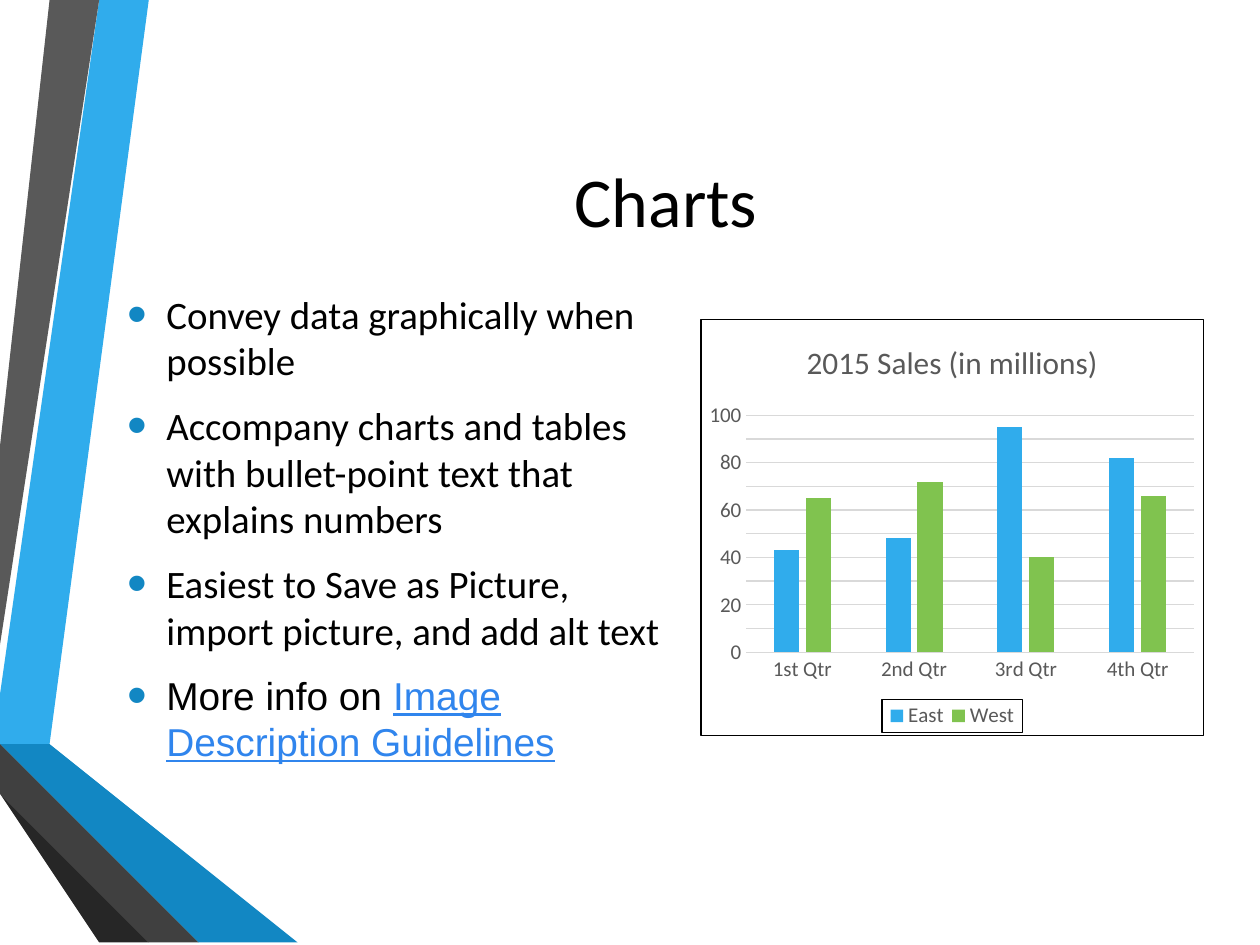
from copy import deepcopy

from lxml import etree
from pptx import Presentation
from pptx import util as u
from pptx.chart import data as cd
from pptx.dml.color import RGBColor
from pptx.enum import chart as ch, text
from pptx.oxml import parse_xml
from pptx.oxml.ns import nsdecls, qn

HUES = {
    "sky": "30ACEC", "blue": "1287C3", "navy": "0C5A82", "green": "80C34F",
    "grey": "595959", "dark": "404040", "coal": "262626", "pale": "D9D9D9",
    "black": "000000", "link": "3085ED",
}

# Ribbon outlines in cm
BANDS = [
    ("sky", [(0, 13.82), (0, 14.61), (0.56, 14.71), (2.97, 0), (2.26, 0)]),
    ("grey", [(2.11, 0), (1.4, 0), (0, 8.53), (0, 12.85)]),
    ("coal", [(0, 15.72), (0, 15.77), (2.36, 19.05), (2.51, 19.05)]),
    ("navy", [(0, 14.71), (0, 14.73), (3.96, 19.05), (4.14, 19.05)]),
    ("blue", [(0, 14.71), (4.14, 19.05), (5.92, 19.05), (0.56, 14.71), (0, 14.61)]),
    ("dark", [(0, 15.72), (2.51, 19.05), (3.84, 19.05), (0, 14.88)]),
]

# Each bullet is a list of (text, font, colour, underline)
ITEMS = [
    [("Convey data graphically when possible", "Calibri", "black", False)],
    [("Accompany charts and tables with bullet-point text that explains numbers",
      "Calibri", "black", False)],
    [("Easiest to Save as Picture, import picture, and add alt text",
      "Calibri", "black", False)],
    [("More info on ", "Arial", "black", False),
     ("Image Description Guidelines", "Arial", "link", True)],
]

QUARTERS = ["1st Qtr", "2nd Qtr", "3rd Qtr", "4th Qtr"]
SALES = [("East", "sky", [43, 48, 95, 82]), ("West", "green", [65, 72, 40, 66])]


def rgb(hue):
    return RGBColor.from_string(HUES[hue])


def apply(item, vals):
    for key, val in vals.items():
        setattr(item, key, val)


def ink(font, size, hue, name="Calibri", **more):
    apply(font, {"size": u.Pt(size), "name": name, "bold": False, **more})
    font.color.rgb = rgb(hue)


def stroke(line, hue):
    line.color.rgb = rgb(hue)
    line.width = u.Pt(0.75)


def band(slide, hue, dots):
    pen = slide.shapes.build_freeform(*dots[0], scale=u.Cm(1))
    pen.add_line_segments(dots[1:], close=True)
    shape = pen.convert_to_shape()
    shape.shadow.inherit = False
    shape.fill.solid()
    shape.fill.fore_color.rgb = rgb(hue)
    shape.line.fill.background()


def place(holder, left, top, width, height):
    apply(holder, {"left": u.Cm(left), "top": u.Cm(top),
                   "width": u.Cm(width), "height": u.Cm(height)})
    frame = holder.text_frame
    apply(frame, {"vertical_anchor": text.MSO_ANCHOR.MIDDLE, "word_wrap": True,
                  "auto_size": text.MSO_AUTO_SIZE.NONE})
    return frame


def bullet(para):
    props = para._p.get_or_add_pPr()
    props.set("marL", str(u.Cm(0.79)))
    props.set("indent", str(-u.Cm(0.79)))
    for tag, inner in (
        ("buClr", f'<a:srgbClr val="{HUES["blue"]}"/>'),
        ("buSzPct", 'val="145000"'),
        ("buFont", 'typeface="Arial"'),
        ("buChar", 'char="•"'),
    ):
        body = f">{inner}</a:{tag}>" if inner[0] == "<" else f" {inner}/>"
        props.append(parse_xml(f"<a:{tag} {nsdecls('a')}{body}"))


def bullets(frame):
    for num, runs in enumerate(ITEMS):
        para = frame.add_paragraph() if num else frame.paragraphs[0]
        apply(para, {"space_before": u.Pt(4.4), "space_after": u.Pt(6),
                     "alignment": text.PP_ALIGN.LEFT})
        bullet(para)
        for words, name, hue, under in runs:
            run = para.add_run()
            run.text = words
            ink(run.font, 22.2, hue, name, underline=under)


def border(node):
    """Thin black outline, added after the given chart node."""
    node.addnext(parse_xml(
        f'<c:spPr {nsdecls("c", "a")}><a:noFill/><a:ln w="{u.Pt(0.75)}"><a:solidFill>'
        f'<a:srgbClr val="{HUES["black"]}"/></a:solidFill></a:ln></c:spPr>'))


def layout(node, spot, box, inner=False):
    """Fix a chart part at (x, y, w, h) as shares of the chart."""
    for old in node.findall(qn("c:layout")):
        node.remove(old)
    root = etree.Element(qn("c:layout"))
    manual = etree.SubElement(root, qn("c:manualLayout"))
    vals = [("layoutTarget", "inner")] if inner else []
    vals += [("xMode", "edge"), ("yMode", "edge"), *zip("xywh", box)]
    for tag, val in vals:
        etree.SubElement(manual, qn(f"c:{tag}")).set("val", str(val))
    node.insert(spot, root)


def graph(slide):
    data = cd.CategoryChartData()
    data.categories = QUARTERS
    for name, _, vals in SALES:
        data.add_series(name, vals)
    chart = slide.shapes.add_chart(
        ch.XL_CHART_TYPE.COLUMN_CLUSTERED,
        u.Cm(14.12), u.Cm(6.43), u.Cm(10.16), u.Cm(8.41), data).chart
    ink(chart.font, 10, "black")

    # Title and legend
    chart.has_title = True
    head = chart.chart_title.text_frame
    head.text = "2015 Sales (in millions)"
    ink(head.paragraphs[0].runs[0].font, 18, "grey")
    chart.has_legend = True
    key = chart.legend
    apply(key, {"position": ch.XL_LEGEND_POSITION.BOTTOM, "include_in_layout": False})
    ink(key.font, 12, "grey")

    # Columns
    plot = chart.plots[0]
    apply(plot, {"gap_width": 219, "overlap": -27, "vary_by_categories": False})
    for series, (_, hue, _) in zip(plot.series, SALES):
        series.format.fill.solid()
        series.format.fill.fore_color.rgb = rgb(hue)

    # Axes
    cat, val = chart.category_axis, chart.value_axis
    for axis in (cat, val):
        apply(axis, {"major_tick_mark": ch.XL_TICK_MARK.NONE,
                     "minor_tick_mark": ch.XL_TICK_MARK.NONE})
        ink(axis.tick_labels.font, 12, "grey")
    stroke(cat.format.line, "pale")
    val.format.line.fill.background()
    apply(val, {"minimum_scale": 0, "maximum_scale": 100, "major_unit": 20,
                "minor_unit": 10, "has_major_gridlines": True,
                "has_minor_gridlines": True})
    stroke(val.major_gridlines.format.line, "pale")

    # Minor gridlines share the major style
    space = chart._chartSpace
    style = space.find(".//" + qn("c:majorGridlines")).find(qn("c:spPr"))
    space.find(".//" + qn("c:minorGridlines")).append(deepcopy(style))

    # Outlines and layout
    border(space.find(qn("c:chart")))
    legend = space.find(".//" + qn("c:legend"))
    border(legend.find(qn("c:overlay")))
    layout(legend, 1, (0.36, 0.92, 0.28, 0.08))
    area = space.find(".//" + qn("c:plotArea"))
    layout(area, 0, (0.09, 0.23, 0.89, 0.57), inner=True)


def main():
    deck = Presentation()
    apply(deck, {"slide_width": u.Cm(25.4), "slide_height": u.Cm(19.05)})
    slide = deck.slides.add_slide(deck.slide_layouts[1])
    for hue, dots in BANDS:
        band(slide, hue, dots)

    # Title
    frame = place(slide.shapes.title, 2.72, 1.27, 21.41, 5.51)
    frame.text = "Charts"
    frame.paragraphs[0].alignment = text.PP_ALIGN.CENTER
    ink(frame.paragraphs[0].runs[0].font, 40, "black")

    # Body and chart
    bullets(place(slide.placeholders[1], 2.31, 6.15, 11.4, 8.97))
    graph(slide)
    deck.save("out.pptx")


if __name__ == "__main__":
    main()
